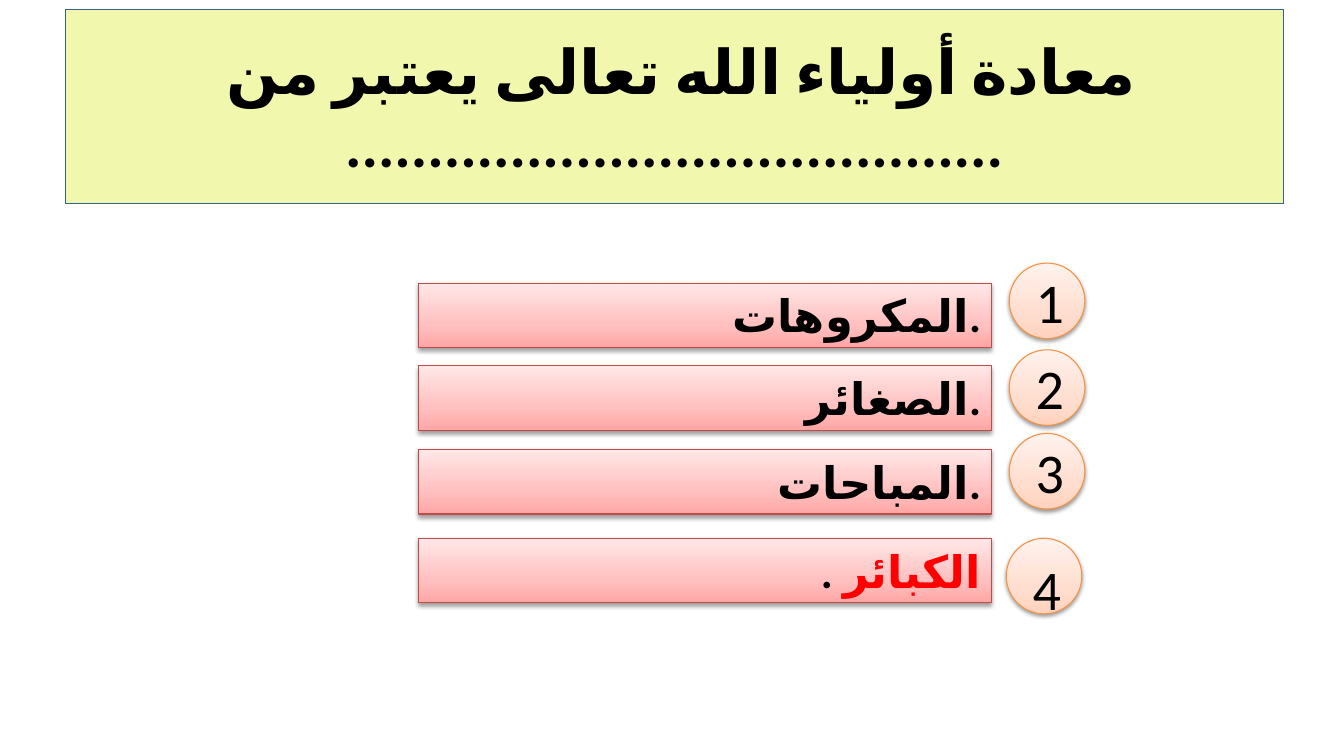
from dataclasses import dataclass

from lxml.etree import SubElement
from pptx import Presentation
from pptx.dml.color import RGBColor
from pptx.enum.lang import MSO_LANGUAGE_ID
from pptx.enum.shapes import MSO_SHAPE
from pptx.enum.text import MSO_ANCHOR, PP_ALIGN
from pptx.oxml import parse_xml
from pptx.oxml.ns import nsdecls, qn
from pptx.shapes.autoshape import Shape
from pptx.slide import Slide
from pptx.text.text import _Paragraph
from pptx.util import Inches, Pt

FONT = "Calibri"
BLACK = RGBColor(0x00, 0x00, 0x00)
RED = RGBColor(0xFF, 0x00, 0x00)
LIME = RGBColor(0xF1, 0xF8, 0xAE)
NAVY = RGBColor(0x37, 0x60, 0x92)
ORANGE = RGBColor(0xF6, 0x92, 0x40)
BRICK = RGBColor(0xBF, 0x4C, 0x48)
PEACH_SHADES = [RGBColor(0xFF, 0xD2, 0xBD), RGBColor(0xFF, 0xDE, 0xD0), RGBColor(0xFF, 0xF2, 0xED)]
PINK_SHADES = [RGBColor(0xFF, 0xA6, 0xA5), RGBColor(0xFF, 0xC0, 0xBF), RGBColor(0xFF, 0xE7, 0xE7)]
SHADE_STOPS = [0, 35, 100]


@dataclass
class Answer:
    number: str
    words: list[tuple[str, RGBColor]]
    bar_top: float
    badge_top: float
    badge_left: float = 10.01
    badge_anchor: MSO_ANCHOR = MSO_ANCHOR.MIDDLE
    rtl: bool = False


ANSWERS = [
    Answer("1", [("المكروهات.", BLACK)], 2.81, 2.61),
    Answer("2", [("الصغائر.", BLACK)], 3.63, 3.47),
    Answer("3", [("المباحات.", BLACK)], 4.46, 4.3),
    Answer("4", [("الكبائر ", RED), (".", BLACK)], 5.34, 5.34, 9.98, MSO_ANCHOR.TOP, True),
]


def add_box(slide: Slide, kind: MSO_SHAPE, left: float, top: float,
            width: float, height: float, outline: RGBColor) -> Shape:
    box = slide.shapes.add_shape(kind, Inches(left), Inches(top), Inches(width), Inches(height))
    box.shadow.inherit = False
    box.line.color.rgb = outline
    box.line.width = Pt(0.75)
    box.text_frame.word_wrap = True
    return box


def shade(box: Shape, colours: list[RGBColor]) -> None:
    """Give the box an upward three-stop gradient and a soft shadow below."""
    stops = "".join(
        f'<a:gs pos="{stop * 1000}"><a:srgbClr val="{colour}"/></a:gs>'
        for stop, colour in zip(SHADE_STOPS, colours)
    )
    gradient = parse_xml(
        f'<a:gradFill {nsdecls("a")} rotWithShape="1"><a:gsLst>{stops}</a:gsLst>'
        '<a:lin ang="16200000" scaled="0"/></a:gradFill>'
    )
    properties = box._element.spPr
    properties.find(qn("a:prstGeom")).addnext(gradient)
    shadow = SubElement(properties.find(qn("a:effectLst")), qn("a:outerShdw"),
                        blurRad=str(Pt(3.1)), dist=str(Pt(1.6)), dir="5400000", rotWithShape="0")
    colour = SubElement(shadow, qn("a:srgbClr"), val=str(BLACK))
    SubElement(colour, qn("a:alpha"), val="38000")


def add_run(paragraph: _Paragraph, text: str, size: int, colour: RGBColor, bold: bool) -> None:
    run = paragraph.add_run()
    run.text = text
    run.font.name = FONT
    run.font.size = Pt(size)
    run.font.bold = bold
    run.font.color.rgb = colour
    run.font.language_id = MSO_LANGUAGE_ID.ARABIC
    SubElement(run.font._element, qn("a:cs"), typeface=FONT)


def start_text(box: Shape, align: PP_ALIGN, rtl: bool = False) -> _Paragraph:
    paragraph = box.text_frame.paragraphs[0]
    paragraph.alignment = align
    if rtl:
        paragraph._p.get_or_add_pPr().set("rtl", "1")
    return paragraph


def add_question(slide: Slide) -> None:
    banner = add_box(slide, MSO_SHAPE.RECTANGLE, 0.65, 0.09, 12.08, 1.93, NAVY)
    banner.fill.solid()
    banner.fill.fore_color.rgb = LIME
    question = start_text(banner, PP_ALIGN.CENTER, rtl=True)
    add_run(question, "معادة أولياء الله تعالى يعتبر من ", 44, BLACK, True)
    question.add_line_break()
    add_run(question, "." * 40, 44, BLACK, True)


def add_answer(slide: Slide, answer: Answer) -> None:
    badge = add_box(slide, MSO_SHAPE.OVAL, answer.badge_left, answer.badge_top, 0.75, 0.75, ORANGE)
    shade(badge, PEACH_SHADES)
    badge.text_frame.vertical_anchor = answer.badge_anchor
    add_run(start_text(badge, PP_ALIGN.RIGHT), answer.number, 40, BLACK, False)

    bar = add_box(slide, MSO_SHAPE.RECTANGLE, 4.15, answer.bar_top, 5.68, 0.64, BRICK)
    shade(bar, PINK_SHADES)
    bar.text_frame.vertical_anchor = MSO_ANCHOR.TOP
    paragraph = start_text(bar, PP_ALIGN.RIGHT, answer.rtl)
    for text, colour in answer.words:
        add_run(paragraph, text, 32, colour, True)


def main() -> None:
    presentation = Presentation()
    presentation.slide_width = Inches(13.33)
    presentation.slide_height = Inches(7.5)
    slide = presentation.slides.add_slide(presentation.slide_layouts[6])
    add_question(slide)
    for answer in ANSWERS:
        add_answer(slide, answer)
    presentation.save("out.pptx")


if __name__ == "__main__":
    main()
